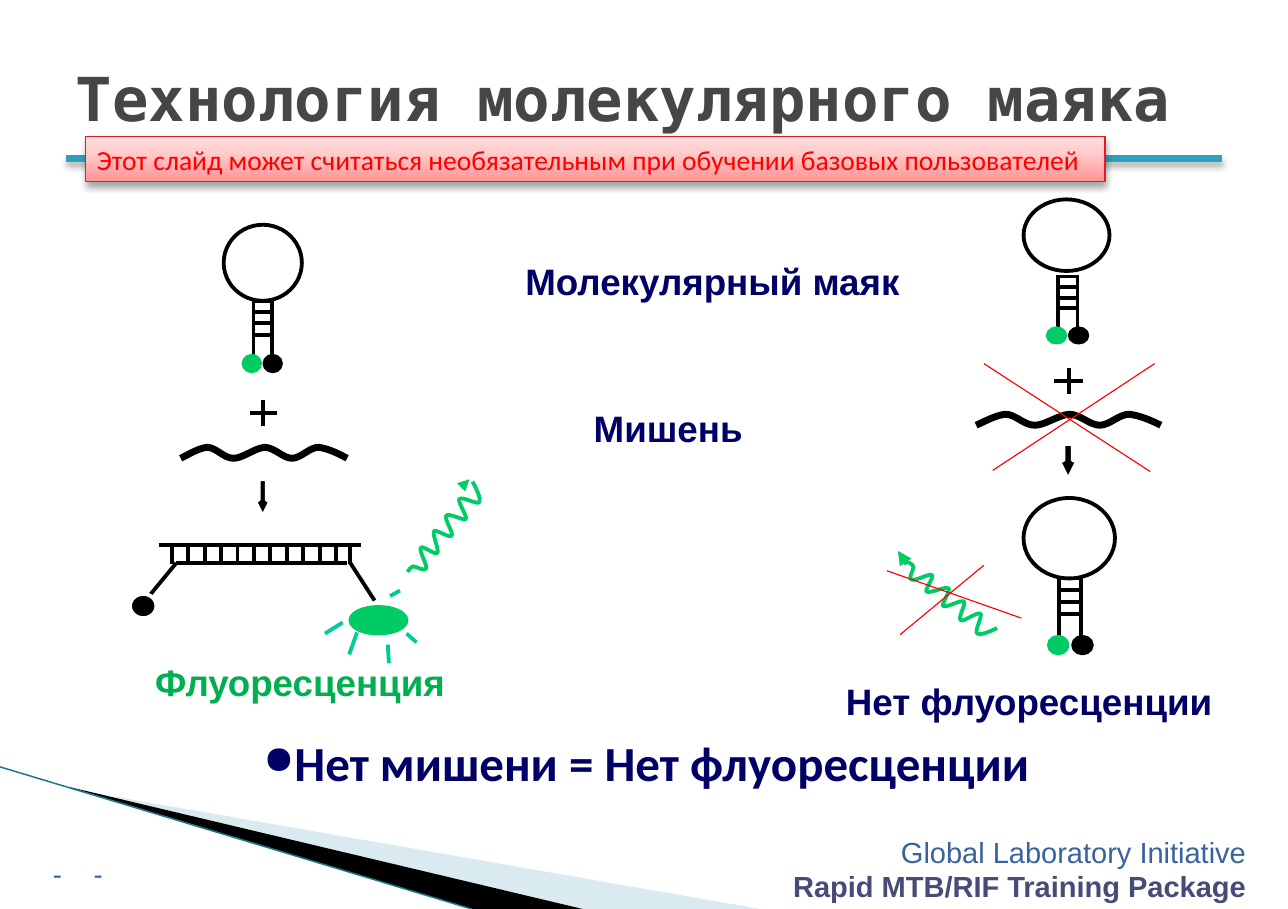
"""Builds the slide on molecular beacon technology."""
import copy

import pptx
import pptx.dml.color
import pptx.enum.shapes
import pptx.enum.text
import pptx.oxml.ns
import pptx.util
from lxml import etree

COLOURS = {
    "black": "000000", "white": "FFFFFF", "red": "FF0000", "navy": "000066",
    "dye": "00CC66", "ray": "00CC99", "caption": "00B050", "title": "464646",
    "rule": "2DA2BF", "edge": "1E768C", "wedge": "A0CBDC", "border": "DA1F28",
    "footer": "39639D", "package": "474B78",
    "deep pink": "FF9294", "pink": "FFCDCD", "pale pink": "FFDCDC",
}
SHAPES = pptx.enum.shapes.MSO_SHAPE
ALIGN = pptx.enum.text.PP_ALIGN
ANCHOR = pptx.enum.text.MSO_ANCHOR
qn = pptx.oxml.ns.qn

STRAND = [
    (0, .1), (.08, .06), (.16, .01), (.24, 0), (.32, 0), (.39, .1), (.48, .1),
    (.56, .1), (.67, .01), (.76, 0), (.85, 0), (.93, .1), (1.01, .1),
    (1.09, .1), (1.17, 0), (1.25, 0), (1.33, .01), (1.42, .05), (1.51, .1)]
EMISSION = [
    (4.29, 4.37), (4.33, 4.45), (4.37, 4.53), (4.35, 4.56), (4.33, 4.58),
    (4.19, 4.5), (4.17, 4.53), (4.15, 4.55), (4.24, 4.68), (4.23, 4.71),
    (4.21, 4.73), (4.07, 4.65), (4.05, 4.68), (4.03, 4.71), (4.12, 4.84),
    (4.1, 4.86), (4.08, 4.89), (3.96, 4.8), (3.94, 4.82), (3.92, 4.85),
    (3.99, 4.99), (3.97, 5.02), (3.95, 5.04), (3.84, 4.95), (3.82, 4.97),
    (3.8, 5), (3.88, 5.13), (3.87, 5.16), (3.85, 5.19), (3.78, 5.14),
    (3.75, 5.14), (3.72, 5.15), (3.71, 5.18), (3.7, 5.19)]
NO_EMISSION = [
    (9.05, 5.7), (8.97, 5.74), (8.89, 5.77), (8.87, 5.75), (8.84, 5.73),
    (8.92, 5.59), (8.9, 5.57), (8.87, 5.55), (8.74, 5.65), (8.72, 5.63),
    (8.69, 5.61), (8.77, 5.48), (8.75, 5.46), (8.72, 5.44), (8.59, 5.52),
    (8.56, 5.5), (8.54, 5.49), (8.63, 5.36), (8.61, 5.34), (8.58, 5.32),
    (8.44, 5.39), (8.41, 5.37), (8.39, 5.35), (8.48, 5.24), (8.46, 5.22),
    (8.44, 5.2), (8.3, 5.28), (8.27, 5.26), (8.24, 5.25), (8.29, 5.18),
    (8.29, 5.15), (8.29, 5.12), (8.25, 5.11), (8.24, 5.1)]


def inches(*values):
    """Turns inch values into lengths."""
    return [pptx.util.Cm(value * 2.54) for value in values]


def colour(name):
    """Looks up a colour by name."""
    return pptx.dml.color.RGBColor.from_string(COLOURS[name])


def paint(shape, fill=None, outline=None, width=2.5):
    """Sets the fill and outline of a shape and drops its shadow."""
    shape.shadow.inherit = False
    if fill:
        shape.fill.solid()
        shape.fill.fore_color.rgb = colour(fill)
    else:
        shape.fill.background()
    if outline:
        shape.line.color.rgb = colour(outline)
        shape.line.width = pptx.util.Pt(width)
    else:
        shape.line.fill.background()


def add_shadow(shape):
    """Gives a shape a soft shadow below it."""
    effects = shape._element.spPr.find(qn("a:effectLst"))
    shadow = etree.SubElement(effects, qn("a:outerShdw"), blurRad="50800",
                              dist="38100", dir="5400000", rotWithShape="0")
    tint = etree.SubElement(shadow, qn("a:srgbClr"), val=COLOURS["black"])
    etree.SubElement(tint, qn("a:alpha"), val="35000")


def add_line(page, start_x, start_y, end_x, end_y, tone="black", width=2.5, arrow=False):
    """Draws a straight line, with an arrowhead at its end if asked."""
    line = page.shapes.add_connector(pptx.enum.shapes.MSO_CONNECTOR.STRAIGHT,
                                     *inches(start_x, start_y, end_x, end_y))
    line.line.color.rgb = colour(tone)
    line.line.width = pptx.util.Pt(width)
    if arrow:
        etree.SubElement(line.line._get_or_add_ln(), qn("a:tailEnd"), type="triangle")
    etree.SubElement(line._element.spPr, qn("a:effectLst"))
    return line


def add_preset(page, kind, place, fill=None, outline="black"):
    """Draws a preset shape."""
    shape = page.shapes.add_shape(kind, *inches(*place))
    paint(shape, fill, outline)
    return shape


def add_outline(page, points, closed):
    """Draws a freeform through the points."""
    corners = [inches(*point) for point in points]
    builder = page.shapes.build_freeform(*corners[0])
    builder.add_line_segments(corners[1:], close=closed)
    return builder.convert_to_shape()


def add_wedge(page, points, fill):
    """Draws a filled corner wedge."""
    wedge = add_outline(page, points, True)
    paint(wedge, fill)
    return wedge


def add_curve(page, points, tone, width):
    """Draws a wave of cubic curves, three points to each curve."""
    wave = add_outline(page, points, False)
    paint(wave, None, tone, width)
    route = wave._element.spPr.find(".//" + qn("a:path"))
    lines = route.findall(qn("a:lnTo"))
    for first in range(0, len(lines), 3):
        curve = etree.SubElement(route, qn("a:cubicBezTo"))
        for line in lines[first:first + 3]:
            curve.append(line[0])
            route.remove(line)


def style_text(frame, size, font, tone, bold=False, align=ALIGN.LEFT, margins=(.1, .05)):
    """Sets margins and paragraph formatting of a text frame."""
    frame.margin_left = frame.margin_right = inches(margins[0])[0]
    frame.margin_top = frame.margin_bottom = inches(margins[1])[0]
    for para in frame.paragraphs:
        para.alignment = align
        para.font.size = pptx.util.Pt(size)
        para.font.name = font
        para.font.bold = bold
        para.font.color.rgb = colour(tone)


def add_text(page, text, place):
    """Adds a wrapping text box and returns its frame."""
    frame = page.shapes.add_textbox(*inches(*place)).text_frame
    frame.word_wrap = True
    frame.text = text
    return frame


def add_beacon(page, loop, left, right, top, bottom, dot_size):
    """Draws a hairpin beacon: loop, stem, rungs, dye and quencher."""
    for side in (left, right):
        add_line(page, side, bottom, side, top)
    add_preset(page, SHAPES.OVAL, loop)
    for rung in range(4):
        level = top + .01 + rung * .205 * (bottom - top)
        add_line(page, left + .01, level, right - .01, level)
    for dot_left, tone in ((left - .09, "dye"), (right - .07, "black")):
        add_preset(page, SHAPES.OVAL, (dot_left, bottom + .01, *dot_size), tone, tone)


def add_reaction(page, plus_x, plus_y, arm, arrow, strand_x, strand_y, stretch):
    """Draws the plus sign, the target strand and the down arrow."""
    add_line(page, plus_x, plus_y - .12, plus_x, plus_y + .12)
    add_line(page, plus_x - arm, plus_y, plus_x + arm, plus_y)
    add_curve(page, [(strand_x + x * stretch, strand_y + y) for x, y in STRAND], "black", 4.5)
    pointer = add_preset(page, SHAPES.DOWN_ARROW, arrow, "black", "white")
    pointer.adjustments[1] = 1.0


def add_duplex(page):
    """Draws the opened beacon on its target with the glowing dye."""
    for ends in ((1.6, 5.11, 1.32, 5.45), (3.18, 5.11, 3.4, 5.45),
                 (1.6, 5.11, 3.15, 5.11), (1.44, 4.95, 3.28, 4.95)):
        add_line(page, *ends)
    for x in [1.56 + .149 * rung for rung in range(11)] + [3.18]:
        add_line(page, x, 5.12, x, 4.93)
    add_preset(page, SHAPES.OVAL, (3.18, 5.51, .51, .24), "dye", "dye")
    add_preset(page, SHAPES.OVAL, (1.18, 5.39, .24, .22), "black", "white")
    for ray in ((3.52, 5.85, 3.53, 6.02), (3.24, 5.74, 3.17, 5.94), (3.69, 5.75, 3.78, 5.83),
                (3.11, 5.65, 2.95, 5.75), (3.54, 5.41, 3.63, 5.36)):
        add_line(page, *ray, "ray")


def add_backdrop(page):
    """Draws the corner wedges, title rule and footer."""
    pale = add_wedge(page, [(.64, 7.16), (6.9, 8.25), (5.3, 8.25)], "wedge")
    tint = pale._element.spPr.find(qn("a:solidFill"))[0]
    etree.SubElement(tint, qn("a:alpha"), val="40000")
    add_wedge(page, [(.62, 7.14), (5.29, 8.25), (4.29, 8.25)], "black")
    add_line(page, 0, 6.96, 4.28, 8.25, "edge", .95)
    add_shadow(add_line(page, .6, 1.44, 11.09, 1.44, "rule", 4.33))
    footer = add_text(page, "Global Laboratory Initiative\nRapid MTB/RIF Training Package",
                      (6.78, 7.51, 4.64, .74))
    style_text(footer, 19, "Arial", "footer", False, ALIGN.RIGHT, (.11, .06))
    footer.paragraphs[1].font.bold = True
    footer.paragraphs[1].font.color.rgb = colour("package")
    dashes = add_text(page, "-\t-", (.37, 7.72, .75, .47))
    tabs = etree.SubElement(dashes.paragraphs[0]._p.get_or_add_pPr(), qn("a:tabLst"))
    etree.SubElement(tabs, qn("a:tab"), pos=str(inches(.37)[0]), algn="l")
    style_text(dashes, 18, "Arial", "footer", margins=(.11, .06))


def add_banner(page):
    """Draws the pink note under the title."""
    banner = add_preset(page, SHAPES.RECTANGLE, (.78, 1.24, 9.25, .41), "pink", "border")
    banner.line.width = pptx.util.Pt(.75)
    banner.fill.gradient()
    banner.fill.gradient_angle = 90
    stops = banner._element.spPr.find(".//" + qn("a:gsLst"))
    stops.append(copy.deepcopy(stops[0]))
    for stop, (position, tone) in zip(banner.fill.gradient_stops, (
            (0, "deep pink"), (.65, "pink"), (1, "pale pink"))):
        stop.position = position
        stop.color.rgb = colour(tone)
    add_shadow(banner)
    frame = banner.text_frame
    frame.text = "Этот слайд может считаться необязательным при обучении базовых пользователей"
    frame.word_wrap = False
    style_text(frame, 18, "Calibri", "red")


def main():
    """Builds and saves the slide."""
    deck = pptx.Presentation()
    deck.slide_width, deck.slide_height = inches(11.69, 8.25)
    page = deck.slides.add_slide(deck.slide_layouts[5])
    add_backdrop(page)
    title = page.shapes.title
    title.left, title.top, title.width, title.height = inches(.58, .33, 10.52, 1.11)
    title.text_frame.text = "Технология молекулярного маяка"
    title.text_frame.vertical_anchor = ANCHOR.MIDDLE
    style_text(title.text_frame, 39.6, "DejaVu Sans Mono", "title", True, margins=(.11, .06))

    add_beacon(page, (2.03, 2.04, .71, .69), 2.3, 2.47, 2.72, 3.22, (.15, .14))
    add_beacon(page, (9.29, 1.81, .78, .65), 9.6, 9.78, 2.5, 2.97, (.16, .13))
    add_beacon(page, (9.29, 4.52, .83, .73), 9.61, 9.81, 5.24, 5.77, (.17, .15))
    add_reaction(page, 2.39, 3.75, .12, (2.31, 4.35, .15, .34), 1.64, 4.06, 1)
    add_reaction(page, 9.7, 3.46, .13, (9.61, 4.03, .17, .32), 8.86, 3.76, 1.11)
    add_duplex(page)
    add_curve(page, EMISSION, "dye", 2.5)
    add_line(page, 4.25, 4.36, 4.26, 4.35, "dye", 2.5, True)
    add_curve(page, NO_EMISSION, "dye", 2.5)
    add_line(page, 8.23, 5.12, 8.15, 5, "dye", 3, True)
    for cross in ((9.01, 4.27, 10.48, 3.3), (8.93, 3.3, 10.44, 4.28),
                  (8.93, 5.13, 8.17, 5.76), (8.05, 5.18, 9.27, 5.61)):
        add_line(page, *cross, "red", .75)

    for text, place, tone in (
            ("Молекулярный маяк", (4.67, 2.3, 3.77, .5), "navy"),
            ("Мишень", (5.29, 3.63, 1.6, .5), "navy"),
            ("Флуоресценция", (1.31, 5.94, 3, .5), "caption"),
            ("Нет флуоресценции", (7.58, 6.11, 3.8, .5), "navy")):
        style_text(add_text(page, text, place), 24, "Arial", tone, True)
    summary = add_text(page, "Нет мишени = Нет флуоресценции", (2.27, 6.65, 7.2, .69))
    properties = summary.paragraphs[0]._p.get_or_add_pPr()
    etree.SubElement(properties, qn("a:buSzPct"), val="80000")
    etree.SubElement(properties, qn("a:buChar"), char="●")
    style_text(summary, 32, "Calibri", "navy", True, ALIGN.CENTER, (0, 0))
    add_banner(page)
    deck.save("out.pptx")


if __name__ == "__main__":
    main()
